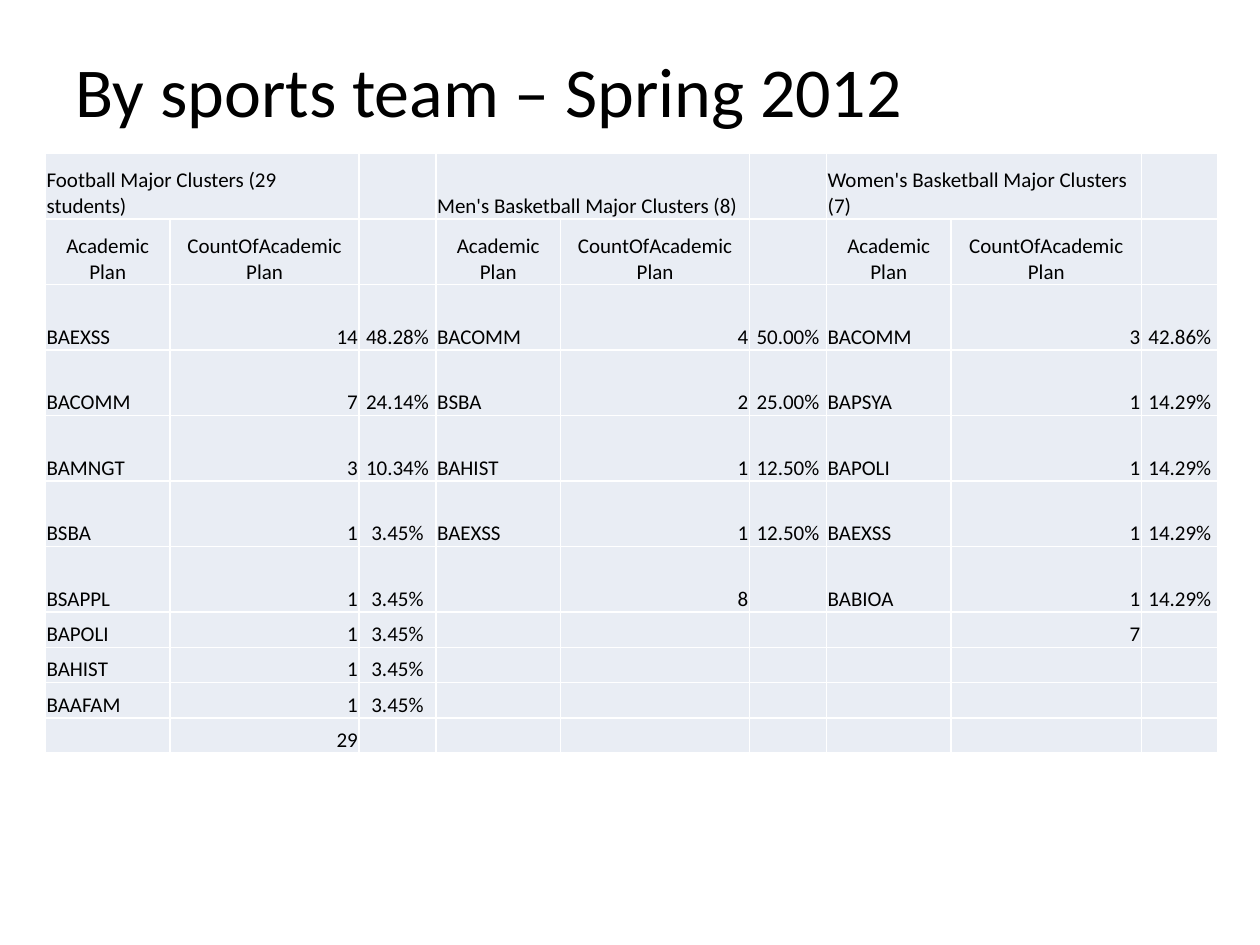
"""Build the slide of academic major clusters by sports team."""
from lxml.etree import SubElement
from pptx import Presentation
from pptx.dml.color import RGBColor as RGB
from pptx.enum.text import MSO_ANCHOR as Anchor, PP_ALIGN as Align
from pptx.oxml.ns import qn
from pptx.util import Inches, Pt

TITLE = "By sports team – Spring 2012"
HEADS = ("Academic Plan", "CountOfAcademic Plan", "")
TEAMS = [
    ("Football Major Clusters (29 students)", [
        ("BAEXSS", "14", "48.28%"), ("BACOMM", "7", "24.14%"),
        ("BAMNGT", "3", "10.34%"), ("BSBA", "1", "3.45%"),
        ("BSAPPL", "1", "3.45%"), ("BAPOLI", "1", "3.45%"),
        ("BAHIST", "1", "3.45%"), ("BAAFAM", "1", "3.45%"),
        ("", "29", "")]),
    ("Men's Basketball Major Clusters (8)", [
        ("BACOMM", "4", "50.00%"), ("BSBA", "2", "25.00%"),
        ("BAHIST", "1", "12.50%"), ("BAEXSS", "1", "12.50%"),
        ("", "8", "")]),
    ("Women's Basketball Major Clusters (7)", [
        ("BACOMM", "3", "42.86%"), ("BAPSYA", "1", "14.29%"),
        ("BAPOLI", "1", "14.29%"), ("BAEXSS", "1", "14.29%"),
        ("BABIOA", "1", "14.29%"), ("", "7", "")]),
]
THEME = {"font": "Calibri", "title": Pt(40), "body": Pt(12), "ink": RGB(0, 0, 0),
         "cell": RGB.from_string("E9EDF4"), "border": "FFFFFF"}
COLS = (0.99, 1.5, 0.61) * 2 + (0.99, 1.51, 0.61)
ROWS = (0.52,) * 7 + (0.28,) * 4
ALIGNS = (Align.LEFT, Align.RIGHT, Align.CENTER)
CELL_FORMAT = {"vertical_anchor": Anchor.BOTTOM, "margin_left": Inches(0.01),
               "margin_right": Inches(0.01), "margin_top": Inches(0.01),
               "margin_bottom": 0}


def set_all(target, values):
    for name, value in values.items():
        setattr(target, name, value)


def write(p, text, size, align):
    p.alignment = align
    if not text:
        SubElement(p._p, qn("a:endParaRPr"), sz=str(int(size.pt * 100)))
        return
    r = p.add_run()
    r.text = text
    set_all(r.font, {"name": THEME["font"], "size": size})
    r.font.color.rgb = THEME["ink"]


def style_cell(cell):
    set_all(cell, CELL_FORMAT)
    tc_pr = cell._tc.get_or_add_tcPr()
    for side in ("lnL", "lnR", "lnT", "lnB"):
        line = SubElement(tc_pr, qn(f"a:{side}"), w=str(Pt(1)))
        fill = SubElement(line, qn("a:solidFill"))
        SubElement(fill, qn("a:srgbClr"), val=THEME["border"])
    cell.fill.solid()
    cell.fill.fore_color.rgb = THEME["cell"]


def add_title(s):
    sp = s.shapes.title
    set_all(sp, {"left": Inches(0.5), "top": Inches(0.3),
                 "width": Inches(9), "height": Inches(1.25)})
    tf = sp.text_frame
    set_all(tf, {"vertical_anchor": Anchor.TOP, "margin_top": Inches(0.08),
                 "word_wrap": True})
    write(tf.paragraphs[0], TITLE, THEME["title"], Align.LEFT)


def add_team_table(s):
    table = s.shapes.add_table(len(ROWS), len(COLS), Inches(0.36), Inches(1.22),
                               Inches(sum(COLS)), Inches(sum(ROWS))).table
    set_all(table, {"first_row": False, "horz_banding": False})
    for col, width in zip(table.columns, COLS):
        col.width = Inches(width)
    for row, height in zip(table.rows, ROWS):
        row.height = Inches(height)
    for t, (name, plans) in enumerate(TEAMS):
        first = t * len(HEADS)
        lines = [(name, "", ""), HEADS, *plans]
        lines += [("", "", "")] * (len(ROWS) - len(lines))
        for i, line in enumerate(lines):
            for j, text in enumerate(line):
                cell = table.cell(i, first + j)
                style_cell(cell)
                align = Align.CENTER if i == 1 else ALIGNS[j]
                write(cell.text_frame.paragraphs[0], text, THEME["body"], align)
        table.cell(0, first).merge(table.cell(0, first + 1))


def main():
    prs = Presentation()
    set_all(prs, {"slide_width": Inches(10), "slide_height": Inches(7.5)})
    s = prs.slides.add_slide(prs.slide_layouts[5])
    add_title(s)
    add_team_table(s)
    prs.save("out.pptx")


if __name__ == "__main__":
    main()
